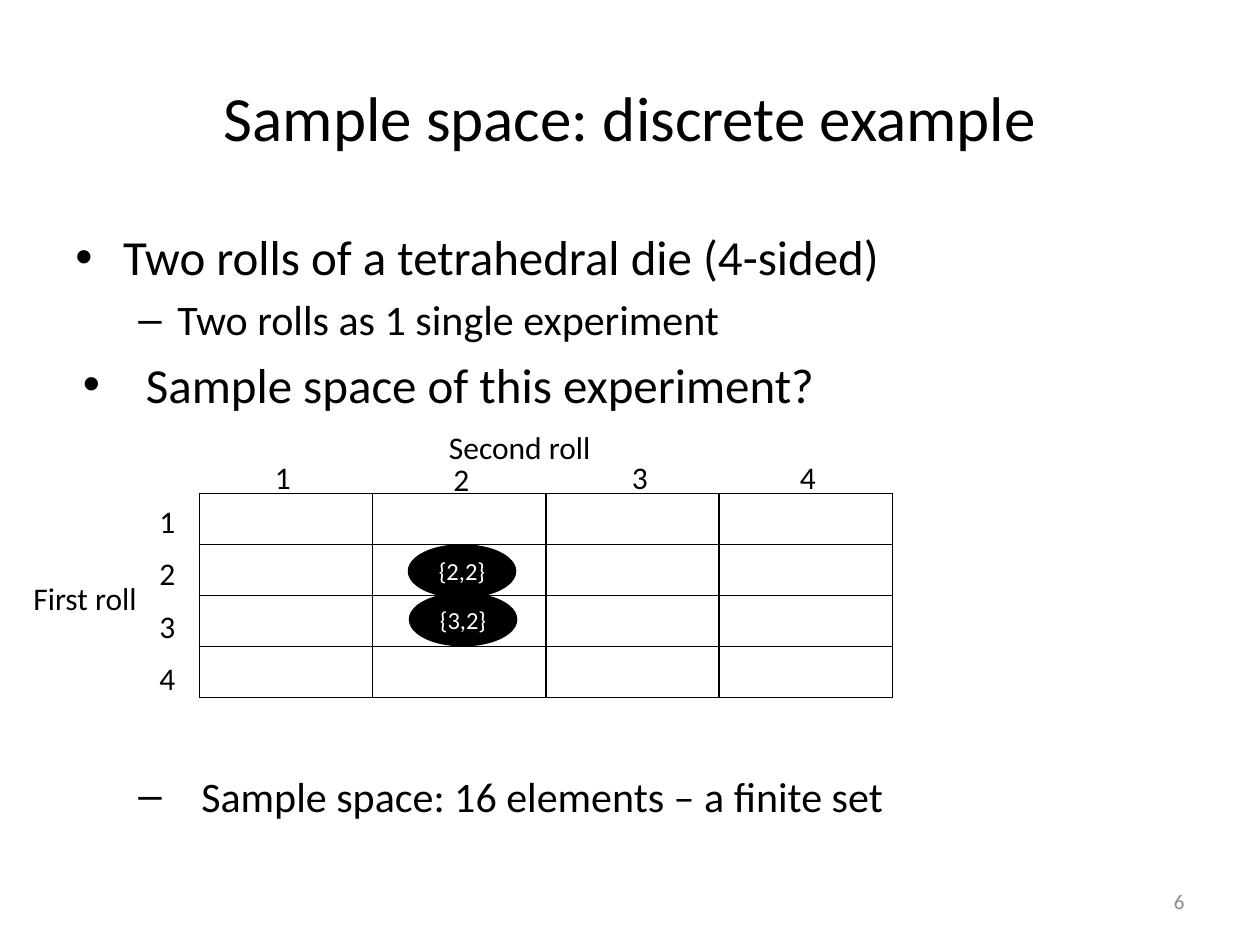
import pptx
import pptx.util
import pptx.dml.color
import pptx.enum.shapes
import pptx.enum.text
import pptx.oxml
import pptx.oxml.ns

BLACK = pptx.dml.color.RGBColor(0x00, 0x00, 0x00)
WHITE = pptx.dml.color.RGBColor(0xFF, 0xFF, 0xFF)
GREY = pptx.dml.color.RGBColor(0x8C, 0x8C, 0x8C)
LEFT = pptx.enum.text.PP_ALIGN.LEFT
CENTER = pptx.enum.text.PP_ALIGN.CENTER
RIGHT = pptx.enum.text.PP_ALIGN.RIGHT
TOP = pptx.enum.text.MSO_ANCHOR.TOP
MIDDLE = pptx.enum.text.MSO_ANCHOR.MIDDLE


class Deck:
    """Style and current slide; lengths are units of a 120 x 90 grid."""
    font = "Calibri"
    label_size = 18

    def __init__(self, prs):
        self.slide = prs.slides.add_slide(prs.slide_layouts[6])
        self.col = prs.slide_width / 120
        self.row = prs.slide_height / 90

    def box(self, x, y, w, h):
        return (round(x * self.col), round(y * self.row),
                round(w * self.col), round(h * self.row))

    def run(self, p, text, size, color=BLACK):
        r = p.add_run()
        r.text = text
        r.font.name = self.font
        r.font.size = pptx.util.Pt(size)
        r.font.color.rgb = color

    def text(self, at, text, size=label_size, color=BLACK, align=LEFT, anchor=TOP):
        tf = self.slide.shapes.add_textbox(*self.box(*at)).text_frame
        tf.word_wrap = True
        tf.vertical_anchor = anchor
        p = tf.paragraphs[0]
        p.alignment = align
        self.run(p, text, size, color)

    def bullets(self, at, items):
        tf = self.slide.shapes.add_textbox(*self.box(*at)).text_frame
        tf.word_wrap = True
        for i, (text, level, size, margin, hang, before) in enumerate(items):
            p = tf.add_paragraph() if i else tf.paragraphs[0]
            p.level = level
            p.space_before = pptx.util.Pt(before)
            pPr = p._p.get_or_add_pPr()
            pPr.set("marL", str(pptx.util.Inches(margin)))
            pPr.set("indent", str(-pptx.util.Inches(hang)))
            ns = pptx.oxml.ns.nsdecls("a")
            pPr.append(pptx.oxml.parse_xml(f'<a:buFont {ns} typeface="Arial"/>'))
            pPr.append(pptx.oxml.parse_xml(f'<a:buChar {ns} char="{"•–"[level]}"/>'))
            self.run(p, text, size)

    def grid(self, at, rows, cols):
        table = self.slide.shapes.add_table(rows, cols, *self.box(*at)).table
        table.first_row = table.horz_banding = False
        ns = pptx.oxml.ns.nsdecls("a")
        for cell in table.iter_cells():
            tcPr = cell._tc.get_or_add_tcPr()
            for side in ("lnL", "lnR", "lnT", "lnB"):
                tcPr.append(pptx.oxml.parse_xml(
                    f'<a:{side} {ns} w="12700"><a:solidFill>'
                    f'<a:srgbClr val="{BLACK}"/></a:solidFill></a:{side}>'))
            cell.fill.background()

    def ellipse(self, at, text):
        sp = self.slide.shapes.add_shape(
            pptx.enum.shapes.MSO_SHAPE.OVAL, *self.box(*at))
        sp.shadow.inherit = False
        sp.fill.solid()
        sp.fill.fore_color.rgb = BLACK
        sp.line.color.rgb = BLACK
        sp.line.width = pptx.util.Pt(2)
        tf = sp.text_frame
        tf.word_wrap = True
        tf.vertical_anchor = MIDDLE
        p = tf.paragraphs[0]
        p.alignment = CENTER
        self.run(p, text, 14, WHITE)


def main():
    prs = pptx.Presentation()
    prs.slide_width = pptx.util.Inches(10)
    prs.slide_height = pptx.util.Inches(7.5)
    deck = Deck(prs)

    # Title, body and page number
    deck.text((6, 3.6, 108, 15), "Sample space: discrete example", 36,
              align=CENTER, anchor=MIDDLE)
    deck.bullets((6, 21, 108, 59.4), [
        # text, level, size, margin, hanging indent, space before
        ("Two rolls of a tetrahedral die (4-sided)", 0, 28, 0.38, 0.38, 5.6),
        ("Two rolls as 1 single experiment", 1, 24, 0.81, 0.31, 4.8),
        ("Sample space of this experiment?", 0, 28, 0.56, 0.5, 5.6),
        ("Sample space: 16 elements – a finite set", 1, 24, 1, 0.5, 204),
    ])
    deck.text((86, 83.4, 28, 4.8), "6", 12, GREY, RIGHT, MIDDLE)

    # Outcome table with the numbers of both rolls
    deck.grid((19, 47, 66, 19.44), 4, 4)
    for i in range(4):
        deck.text((14, 47.2 + 5 * i, 4, 4.8), str(i + 1))
    for i, (x, y) in enumerate([(25, 43), (42, 43.2), (59, 43), (75, 43)]):
        deck.text((x, y, 4, 4.8), str(i + 1))

    # Marked outcomes
    deck.ellipse((39, 52, 10, 4.8), "{2,2}")
    deck.ellipse((39.1, 56.6, 10, 4.8), "{3,2}")

    # Axis names
    deck.text((2, 54.6, 14, 4.8), "First roll")
    deck.text((39, 40.2, 21, 4.8), "Second roll", align=CENTER)

    prs.save("out.pptx")


if __name__ == "__main__":
    main()
